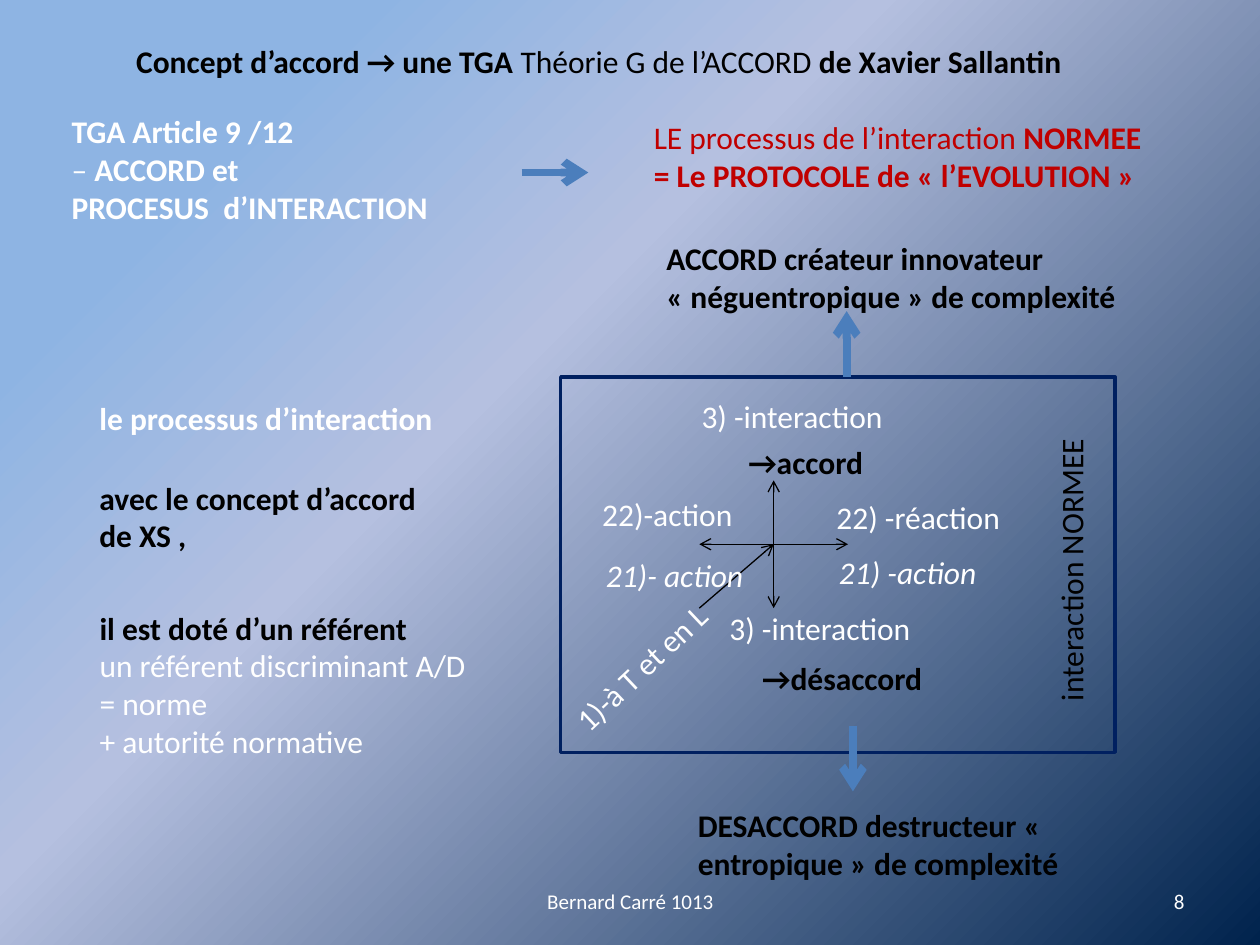
from pptx import Presentation
from pptx.dml.color import RGBColor as Rgb
from pptx.enum.shapes import MSO_CONNECTOR as Connector, MSO_SHAPE as Shape
from pptx.enum.text import MSO_ANCHOR as Anchor, MSO_AUTO_SIZE as AutoSize, PP_ALIGN as Align
from pptx.oxml import parse_xml
from pptx.oxml.ns import nsdecls
from pptx.util import Pt

COLORS = {
    "white": "FFFFFF", "black": "000000", "red": "C00000",
    "navy": "002060", "blue": "4B7EBC",
}
GRADIENT = [(17, "8EB4E3"), (40, "B5C0E0"), (100, "00234D")]

TITLE = (70.6, 20.2, 578, [[
    ("Concept d’accord → une TGA ", "black", "b"),
    ("Théorie G de l’ACCORD ", "black", ""),
    ("de Xavier Sallantin", "black", "b"),
]])
BODY = (49.7, 344.2, 226, [
    [("il est doté d’un référent", "black", "b")],
    [("un référent discriminant A/D", "white", "")],
    [("= norme", "white", "")],
    [("+ autorité normative", "white", "")],
])
PARAGRAPH_BOXES = [
    (33.8, 60.5, 264, [
        [("TGA Article 9 /12", "white", "b")],
        [("–", "white", ""), (" ACCORD et", "white", "b")],
        [("PROCESUS  d’INTERACTION", "white", "b")],
    ]),
    (366.5, 64.1, 296.6, [
        [("LE processus de l’interaction ", "red", ""), ("NORMEE", "red", "b")],
        [("= Le PROTOCOLE de « l’EVOLUTION »", "red", "b")],
    ]),
    (373.7, 133.2, 273, [
        [("ACCORD créateur innovateur", "black", "b")],
        [("« néguentropique » de complexité", "black", "b")],
    ]),
]
WRAPPED_BOXES = [
    (49.7, 270, 206.6, "avec le concept d’accord de XS ,"),
    (391.7, 457.2, 257, "DESACCORD destructeur « entropique » de complexité"),
]
LABELS = [
    (337, 279.4, 90, "22)-action", "white", "", 0),
    (470.9, 280.8, 109.4, "22) -réaction", "white", "", 0),
    (393.8, 223.2, 123.8, "3) -interaction", "white", "", 0),
    (409.7, 344.2, 123.8, "3) -interaction", "white", "", 0),
    (339.1, 313.9, 94.3, "21)- action", "white", "i", 0),
    (472.3, 312.5, 94.3, "21) -action", "white", "i", 0),
    (311.8, 366.5, 110.2, "1)-à T et en L", "white", "", 316.6),
    (529.2, 310.3, 165.6, "interaction NORMEE", "black", "", 270),
    (49.7, 224.6, 210.2, "le processus d’interaction", "white", "b", 0),
    (428.4, 373, 108, "→désaccord", "black", "b", 0),
    (420.5, 249.8, 82, "→accord", "black", "b", 0),
]
FOOTERS = [
    (246.2, 228.2, "Bernard Carré 1013", Align.CENTER),
    (516.2, 167.8, "8", Align.RIGHT),
]
FRAME = (320.4, 215.3, 316.8, 214.6)
CENTER_X, CENTER_Y, REACH_X, REACH_Y = 442.1, 311, 42.5, 36.5
THIN_ARROWS = [
    (CENTER_X - REACH_X, CENTER_Y, CENTER_X + REACH_X, CENTER_Y, ("headEnd", "tailEnd")),
    (CENTER_X, CENTER_Y, CENTER_X, CENTER_Y - REACH_Y, ("tailEnd",)),
    (CENTER_X, CENTER_Y, CENTER_X, CENTER_Y + REACH_Y, ("tailEnd",)),
    (CENTER_X - REACH_X, CENTER_Y + REACH_Y, CENTER_X, CENTER_Y, ("tailEnd",)),
]
THICK_ARROWS = [
    (483.8, FRAME[1], 483.8, 177.8, ("tailEnd",)),
    (298.1, 98.6, 336.2, 98.6, ("tailEnd",)),
    (487.4, 414.7, 487.4, 452.2, ("tailEnd",)),
]


def color(name):
    return Rgb.from_string(COLORS[name])


def set_values(target, values):
    for name, value in values.items():
        setattr(target, name, value)


def fill_text(shape, paragraphs, wrap=False, size=18, align=Align.LEFT, anchor=Anchor.TOP):
    frame = shape.text_frame
    set_values(frame, {"word_wrap": wrap, "auto_size": AutoSize.NONE, "vertical_anchor": anchor})
    for index, runs in enumerate(paragraphs):
        paragraph = frame.add_paragraph() if index else frame.paragraphs[0]
        set_values(paragraph, {"alignment": align, "space_before": Pt(0), "line_spacing": 1.0})
        for text, color_name, style in runs:
            run = paragraph.add_run()
            run.text = text
            set_values(run.font, {
                "name": "Calibri", "size": Pt(size),
                "bold": "b" in style, "italic": "i" in style,
            })
            run.font.color.rgb = color(color_name)


def place(shape, left, top, width, lines):
    set_values(shape, {
        "left": Pt(left), "top": Pt(top),
        "width": Pt(width), "height": Pt(7.4 + 21.7 * lines),
    })


def add_text(left, top, width, paragraphs, lines=None, **format_values):
    shape = slide.shapes.add_textbox(0, 0, 0, 0)
    place(shape, left, top, width, lines or len(paragraphs))
    fill_text(shape, paragraphs, **format_values)
    return shape


def add_arrow(x1, y1, x2, y2, ends, color_name, weight):
    arrow = slide.shapes.add_connector(Connector.STRAIGHT, Pt(x1), Pt(y1), Pt(x2), Pt(y2))
    arrow.line.color.rgb = color(color_name)
    arrow.line.width = Pt(weight)
    line = arrow.line._get_or_add_ln()
    for end in ends:
        line.append(parse_xml(f'<a:{end} {nsdecls("a")} type="arrow"/>'))
    arrow._element.spPr.append(parse_xml(f'<a:effectLst {nsdecls("a")}/>'))


presentation = Presentation()
set_values(presentation, {"slide_width": Pt(720), "slide_height": Pt(540)})
slide = presentation.slides.add_slide(presentation.slide_layouts[1])

stops = "".join(
    f'<a:gs pos="{position * 1000}"><a:srgbClr val="{value}"/></a:gs>'
    for position, value in GRADIENT
)
slide.background.fill.solid()
background = slide._element.cSld.bg.bgPr
background.replace(background[0], parse_xml(
    f'<a:gradFill {nsdecls("a")} rotWithShape="1"><a:gsLst>{stops}</a:gsLst>'
    '<a:path path="circle"><a:fillToRect r="100000" b="100000"/></a:path></a:gradFill>'
))

for arrow in THIN_ARROWS:
    add_arrow(*arrow, "black", 0.75)

for placeholder, (left, top, width, paragraphs) in zip(slide.placeholders, (TITLE, BODY)):
    place(placeholder, left, top, width, len(paragraphs))
    fill_text(placeholder, paragraphs)
for paragraph in slide.placeholders[1].text_frame.paragraphs:
    properties = paragraph._p.get_or_add_pPr()
    properties.set("marL", "0")
    properties.set("indent", "0")
    properties.append(parse_xml(f'<a:buNone {nsdecls("a")}/>'))

for left, top, width, text, color_name, style, rotation in LABELS:
    label = add_text(left, top, width, [[(text, color_name, style)]])
    label.rotation = rotation
for box in PARAGRAPH_BOXES:
    add_text(*box)
for left, top, width, text in WRAPPED_BOXES:
    add_text(left, top, width, [[(text, "black", "b")]], lines=2, wrap=True)

frame = slide.shapes.add_shape(Shape.RECTANGLE, *map(Pt, FRAME))
frame.shadow.inherit = False
frame.fill.background()
frame.line.color.rgb = color("navy")
frame.line.width = Pt(2)

for arrow in THICK_ARROWS:
    add_arrow(*arrow, "blue", 4.5)

for left, width, text, align in FOOTERS:
    add_text(left, 500.4, width, [[(text, "white", "")]],
             wrap=True, size=12, align=align, anchor=Anchor.MIDDLE)

presentation.save("out.pptx")
